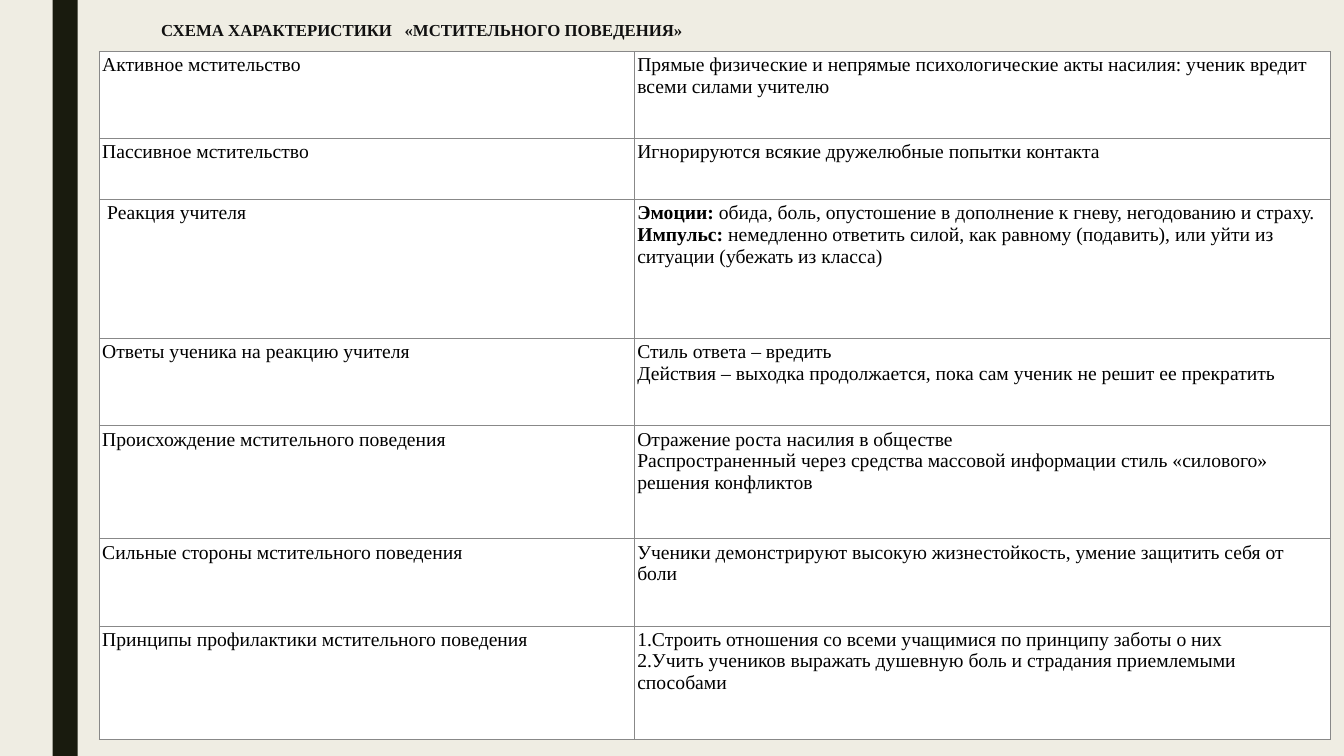
import pptx
import pptx.util
import pptx.dml.color
import pptx.enum.shapes
import pptx.enum.text
import pptx.oxml
import pptx.oxml.ns

Pt = pptx.util.Pt
RGBColor = pptx.dml.color.RGBColor

CREAM = RGBColor(0xEF, 0xED, 0xE3)
DARK = RGBColor(0x19, 0x1B, 0x0E)
TITLE_INK = RGBColor(0x11, 0x11, 0x11)
BLACK = RGBColor(0, 0, 0)
WHITE = RGBColor(0xFF, 0xFF, 0xFF)
GRID = RGBColor(0x88, 0x88, 0x88)

# Row height, topic, then description paragraphs as (bold lead, text, numbered).
ROWS = [
    (62.2, "Активное мстительство", [
        ("", "Прямые физические и непрямые психологические акты насилия: ученик вредит всеми силами учителю", False)]),
    (43.7, "Пассивное мстительство", [
        ("", "Игнорируются всякие дружелюбные попытки контакта", False)]),
    (99.3, " Реакция учителя", [
        ("Эмоции:", " обида, боль, опустошение в дополнение к гневу, негодованию и страху.", False),
        ("Импульс:", " немедленно ответить силой, как равному (подавить), или уйти из ситуации (убежать из класса)", False)]),
    (62.2, "Ответы ученика на реакцию учителя", [
        ("", "Стиль ответа – вредить", False),
        ("", "Действия – выходка продолжается, пока сам ученик не решит ее прекратить", False)]),
    (80.8, "Происхождение мстительного поведения", [
        ("", "Отражение роста насилия в обществе", False),
        ("", "Распространенный через средства массовой информации стиль «силового» решения конфликтов", False)]),
    (62.2, "Сильные стороны мстительного поведения", [
        ("", "Ученики демонстрируют высокую жизнестойкость, умение защитить себя от боли", False)]),
    (80.8, "Принципы профилактики мстительного поведения", [
        ("", "Строить отношения со всеми учащимися по принципу заботы о них", True),
        ("", "Учить учеников выражать душевную боль и страдания приемлемыми способами", True)]),
]


def add_span(para, text, size=14, color=BLACK, bold=False):
    span = para.add_run()
    span.text = text
    span.font.name = "Times New Roman"
    span.font.size = Pt(size)
    span.font.bold = bold
    span.font.color.rgb = color


def frame_cell(cell):
    """Give the cell a white fill, narrow margins and thin grey borders."""
    cell.margin_left = cell.margin_right = Pt(2)
    cell.margin_top = cell.margin_bottom = Pt(2)
    properties = cell._tc.get_or_add_tcPr()
    for side in ("lnL", "lnR", "lnT", "lnB"):
        properties.append(pptx.oxml.parse_xml(
            f'<a:{side} {pptx.oxml.ns.nsdecls("a")} w="{Pt(0.75)}">'
            f'<a:solidFill><a:srgbClr val="{GRID}"/></a:solidFill></a:{side}>'))
    cell.fill.solid()
    cell.fill.fore_color.rgb = WHITE


deck = pptx.Presentation()
deck.slide_width, deck.slide_height = Pt(960), Pt(540)
page = deck.slides.add_slide(deck.slide_layouts[6])
page.background.fill.solid()
page.background.fill.fore_color.rgb = CREAM

bar = page.shapes.add_shape(
    pptx.enum.shapes.MSO_SHAPE.RECTANGLE, Pt(37.5), Pt(0), Pt(18), Pt(540))
bar.shadow.inherit = False
bar.fill.solid()
bar.fill.fore_color.rgb = DARK
bar.line.fill.background()

title = page.shapes.add_textbox(Pt(108), Pt(12), Pt(756), Pt(25)).text_frame
title.word_wrap = True
title.vertical_anchor = pptx.enum.text.MSO_ANCHOR.TOP
title.paragraphs[0].line_spacing = 0.89
add_span(title.paragraphs[0], "СХЕМА ХАРАКТЕРИСТИКИ   «МСТИТЕЛЬНОГО ПОВЕДЕНИЯ»",
         size=12, color=TITLE_INK, bold=True)

table = page.shapes.add_table(
    len(ROWS), 2, Pt(71), Pt(36.8), Pt(879.2), Pt(491.2)).table
table.first_row = table.horz_banding = False
table.columns[0].width, table.columns[1].width = Pt(382.2), Pt(497)

for index, (height, topic, description) in enumerate(ROWS):
    table.rows[index].height = Pt(height)
    for column, paragraphs in enumerate(([("", topic, False)], description)):
        cell = table.cell(index, column)
        frame_cell(cell)
        for number, (lead, text, numbered) in enumerate(paragraphs):
            frame = cell.text_frame
            para = frame.add_paragraph() if number else frame.paragraphs[0]
            if numbered:
                para._p.get_or_add_pPr().append(pptx.oxml.parse_xml(
                    f'<a:buAutoNum {pptx.oxml.ns.nsdecls("a")} type="arabicPeriod"/>'))
            if lead:
                add_span(para, lead, bold=True)
            add_span(para, text)

deck.save("out.pptx")
